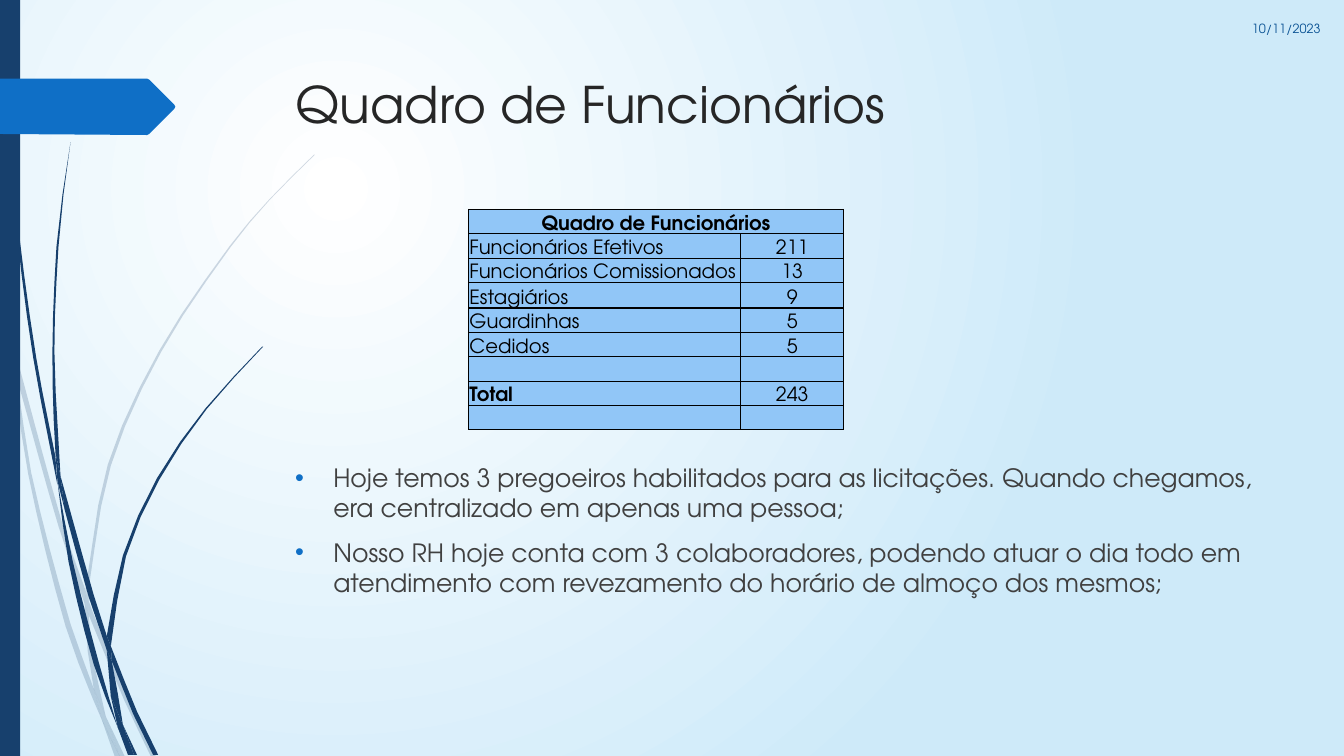
"""Build the staff overview slide with its table and notes."""
from math import dist

from lxml import etree
from pptx import Presentation
from pptx.dml.color import RGBColor
from pptx.enum import shapes, text
from pptx.oxml import ns
from pptx.util import Cm, Pt

FONT = "TeX Gyre Adventor"
NAVY = RGBColor(0x17, 0x40, 0x6D)
BLUE = RGBColor(0x0F, 0x6F, 0xC6)
DATE_BLUE = RGBColor(0x0B, 0x53, 0x94)
CELL_BLUE = RGBColor(0x91, 0xC6, 0xF7)
PALE_BLUE = RGBColor(0xCE, 0xEA, 0xF9)
WHITE = RGBColor(0xFF, 0xFF, 0xFF)
BLACK = RGBColor(0, 0, 0)
TITLE_GREY = RGBColor(0x26, 0x26, 0x26)
BODY_GREY = RGBColor(0x40, 0x40, 0x40)

UNIT = Cm(2.54) / 100
PALE_BLADES = [
    ((11, 350, 9, 322, 0, 282), (0, 299, 10, 344)),
    ((14, 345, 62, 520, 85, 586), (84, 599, 58, 522, 17, 376)),
    ((88, 596, 92, 607, 127, 692, 155, 751), (150, 751, 123, 694, 88, 610)),
    ((105, 711, 124, 751), (119, 751, 105, 711)),
    ((11, 350, 17, 376, 31, 469, 70, 619, 93, 683, 101, 714),
     (101, 714, 92, 693, 65, 621, 28, 470, 11, 350)),
    ((84, 599, 87, 646, 93, 683, 105, 711), (105, 711, 91, 646, 88, 610, 84, 599)),
    ((88, 596, 88, 584, 110, 462, 160, 349, 229, 245, 268, 198, 312, 154),
     (312, 153, 268, 197, 228, 244, 158, 348, 107, 461, 85, 584)),
    ((101, 714, 114, 751), (119, 751, 101, 714)),
    ((88, 610, 88, 596), (85, 586, 84, 599)),
    ((93, 683, 101, 714, 119, 751), (119, 751, 105, 711, 93, 683)),
]
DARK_BLADES = [
    ((4, 0, 7, 110, 17, 233, 33, 355, 57, 481),
     (55, 453, 36, 355, 19, 232, 8, 109, 4, 0)),
    ((60, 472, 93, 590, 106, 631), (106, 645, 88, 592, 64, 505)),
    ((110, 641, 136, 706, 157, 749), (152, 749, 132, 708, 111, 656)),
    ((57, 477, 72, 556, 98, 657, 117, 722), (117, 722, 93, 659, 68, 557, 57, 477)),
    ((70, 141, 63, 193, 58, 245, 54, 349, 60, 472),
     (60, 472, 55, 449, 52, 349, 56, 245, 62, 193, 70, 141)),
    ((122, 719, 136, 749), (133, 749, 122, 719)),
    ((57, 477, 64, 505), (60, 472, 55, 449)),
    ((110, 641, 125, 552, 158, 476, 205, 406, 261, 344),
     (260, 344, 204, 405, 156, 474, 122, 551, 106, 631)),
    ((117, 722, 127, 749), (131, 749, 117, 722)),
    ((106, 645, 110, 691, 122, 719), (122, 719, 111, 656, 106, 645)),
    ((106, 631, 106, 645), (111, 656, 110, 641)),
    ((110, 691, 117, 722, 130, 749), (133, 749, 122, 719, 110, 691)),
]
ARROW = (0, 78, 146, 78, 148, 79, 173, 104, 174, 106, 173, 108, 148, 133, 146, 134, 0, 133)

STAFF = [
    ("Funcionários Efetivos", "211"),
    ("Funcionários Comissionados", "13"),
    ("Estagiários", "9"),
    ("Guardinhas", "5"),
    ("Cedidos", "5"),
    ("", ""),
    ("Total", "243"),
    ("", ""),
]
NOTES = [
    "Hoje temos 3 pregoeiros habilitados para as licitações. Quando chegamos, "
    "era centralizado em apenas uma pessoa;",
    "Nosso RH hoje conta com 3 colaboradores, podendo atuar o dia todo em "
    "atendimento com revezamento do horário de almoço dos mesmos;",
]


def add_xml(parent, tag, **attributes):
    """Append a child element and return it."""
    return etree.SubElement(parent, ns.qn(tag), attributes)


def write(paragraph, words, size, color, bold=False, align=text.PP_ALIGN.LEFT):
    """Put formatted words into a paragraph."""
    paragraph.alignment = align
    if not words:
        add_xml(paragraph._p, "a:endParaRPr", sz=str(size * 100))
        return
    run = paragraph.add_run()
    run.text = words
    run.font.name, run.font.size, run.font.bold = FONT, Pt(size), bold
    run.font.color.rgb = color


def add_box(slide, left, top, width, height, anchor=text.MSO_ANCHOR.TOP):
    """Add a wrapping text box and return its text frame."""
    frame = slide.shapes.add_textbox(Cm(left), Cm(top), Cm(width), Cm(height)).text_frame
    frame.word_wrap = True
    frame.vertical_anchor = anchor
    return frame


def paint(shape, color):
    """Give a shape a plain fill without line or shadow."""
    shape.shadow.inherit = False
    shape.fill.solid()
    shape.fill.fore_color.rgb = color
    shape.line.fill.background()


def to_points(numbers):
    """Pair a flat run of numbers into slide points."""
    return [(x * UNIT, y * UNIT) for x, y in zip(numbers[::2], numbers[1::2])]


def smooth(points):
    """Return points about a centimetre apart on a curve through the given points."""
    last = len(points) - 1
    slopes = []
    for index in range(last + 1):
        before, here, after = points[max(index - 1, 0)], points[index], points[min(index + 1, last)]
        length = dist(before, here) + dist(here, after)
        slopes.append([(b - a) / length for a, b in zip(before, after)])
    curve = [points[0]]
    for index in range(last):
        start, end = points[index:index + 2]
        length = dist(start, end)
        steps = max(1, round(length / Cm(1)))
        for step in range(1, steps + 1):
            t = step / steps
            rise = t * t * (3 - 2 * t)
            curve.append(tuple(
                a + (b - a) * rise + length * (m * t * (1 - t) ** 2 - n * t * t * (1 - t))
                for a, b, m, n in zip(start, end, slopes[index], slopes[index + 1])))
    return curve


def add_outline(parent, points, color):
    """Add a closed filled outline."""
    builder = parent.shapes.build_freeform(*points[0])
    builder.add_line_segments(points[1:], close=True)
    shape = builder.convert_to_shape()
    paint(shape, color)
    return shape


def add_grass(slide, blades, alpha=None):
    """Add a group of curved blades."""
    group = slide.shapes.add_group_shape()
    for edges in blades:
        points = [point for edge in edges for point in smooth(to_points(edge))]
        shape = add_outline(group, points, NAVY)
        if alpha:
            color = shape.fill._xPr.find(".//" + ns.qn("a:srgbClr"))
            add_xml(color, "a:alpha", val=str(alpha * 1000))


def fill_background(slide):
    """Fill the background with a round gradient."""
    fill = slide.background.fill
    fill.gradient()
    for stop, color in zip(fill.gradient_stops, (WHITE, PALE_BLUE)):
        stop.color.rgb = color
    gradient = slide._element.find(".//" + ns.qn("a:gradFill"))
    gradient.remove(gradient.find(ns.qn("a:lin")))
    circle = add_xml(gradient, "a:path", path="circle")
    add_xml(circle, "a:fillToRect", l="50000", t="50000", r="100000", b="100000")


def fill_cell(cell, words, **style):
    """Border, fill and label a table cell."""
    properties = cell._tc.get_or_add_tcPr()
    for side in "LRTB":
        line = add_xml(properties, f"a:ln{side}", w=str(Pt(1)))
        add_xml(add_xml(line, "a:solidFill"), "a:srgbClr", val=str(BLACK))
    cell.fill.solid()
    cell.fill.fore_color.rgb = CELL_BLUE
    cell.margin_left = cell.margin_right = cell.margin_top = Cm(0.02)
    cell.margin_bottom = Cm(0)
    cell.vertical_anchor = text.MSO_ANCHOR.BOTTOM
    write(cell.text_frame.paragraphs[0], words, 14, BLACK, **style)


def add_staff_table(slide):
    """Add the staff table under a merged heading."""
    heights = [0.56, 0.53, 0.53, 0.64, 0.53, 0.53, 0.53, 0.53, 0.56]
    table = slide.shapes.add_table(
        len(heights), 2, Cm(11.81), Cm(5.28), Cm(9.45), Cm(sum(heights))).table
    table.first_row = table.horz_banding = False
    for column, width in zip(table.columns, (6.86, 2.59)):
        column.width = Cm(width)
    for row, height in zip(table.rows, heights):
        row.height = Cm(height)
    center = text.PP_ALIGN.CENTER
    table.cell(0, 0).merge(table.cell(0, 1))
    fill_cell(table.cell(0, 0), "Quadro de Funcionários", bold=True, align=center)
    fill_cell(table.cell(0, 1), "")
    for index, (label, count) in enumerate(STAFF, 1):
        fill_cell(table.cell(index, 0), label, bold=label == "Total")
        fill_cell(table.cell(index, 1), count, align=center)


def add_notes(slide):
    """Add the bulleted remarks below the table."""
    frame = add_box(slide, 7.19, 11.53, 24.77, 5.21)
    for index, note in enumerate(NOTES):
        paragraph = frame.add_paragraph() if index else frame.paragraphs[0]
        if index:
            paragraph.space_before = Pt(10)
        properties = paragraph._p.get_or_add_pPr()
        properties.set("marL", str(Cm(0.96)))
        properties.set("indent", str(-Cm(0.96)))
        add_xml(add_xml(properties, "a:buClr"), "a:srgbClr", val=str(BLUE))
        add_xml(properties, "a:buFont", typeface="Arial")
        add_xml(properties, "a:buChar", char="•")
        write(paragraph, note, 18, BODY_GREY)


def main():
    """Build and save the slide."""
    presentation = Presentation()
    presentation.slide_width, presentation.slide_height = Cm(33.87), Cm(19.05)
    slide = presentation.slides.add_slide(presentation.slide_layouts[6])
    fill_background(slide)
    add_grass(slide, PALE_BLADES, alpha=20)
    add_grass(slide, DARK_BLADES)
    band = slide.shapes.add_shape(shapes.MSO_SHAPE.RECTANGLE, 0, 0, Cm(0.51), Cm(19.05))
    paint(band, NAVY)
    add_outline(slide, to_points(ARROW), BLUE)
    title = add_box(slide, 7.21, 1.73, 24.77, 3.56)
    write(title.paragraphs[0], "Quadro de Funcionários", 36, TITLE_GREY)
    date = add_box(slide, 30.35, 0.2, 3.18, 1.04, text.MSO_ANCHOR.MIDDLE)
    write(date.paragraphs[0], "10/11/2023", 9, DATE_BLUE, align=text.PP_ALIGN.RIGHT)
    add_staff_table(slide)
    add_notes(slide)
    presentation.save("out.pptx")


if __name__ == "__main__":
    main()
